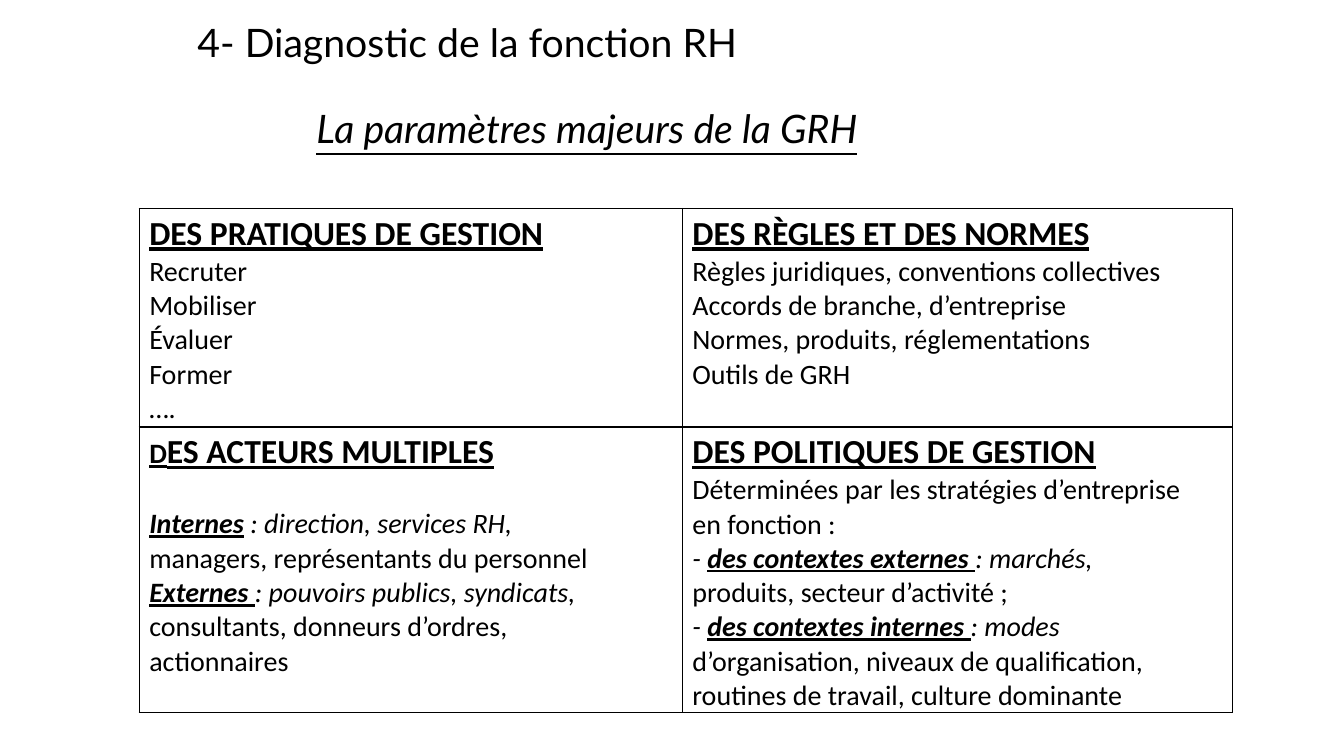
from dataclasses import dataclass

import pptx
import pptx.dml.color
import pptx.oxml
import pptx.oxml.ns
import pptx.util
from pptx.util import Pt


@dataclass(frozen=True)
class Theme:
    ink: str = "000000"
    paper: str = "FFFFFF"
    title_font: str = "Lato"
    body_font: str = "Calibri"
    title_size: int = 28
    heading_size: int = 24
    body_size: int = 20
    border: int = 1
    blank_line: float = 24.4


def rgb(value):
    return pptx.dml.color.RGBColor.from_string(value)


def apply_style(font, style):
    if "b" in style:
        font.bold = True
    if "i" in style:
        font.italic = True
    if "u" in style:
        font.underline = True


class SlideWriter:
    def __init__(self, slide, theme):
        self.slide = slide
        self.theme = theme

    def paragraph(self, paragraph, runs, font_name, size):
        font = paragraph.font
        font.name, font.size = font_name, Pt(size)
        font.color.rgb = rgb(self.theme.ink)
        shared = set.intersection(*(set(style) for _, style in runs))
        apply_style(font, shared)
        for words, style in runs:
            run = paragraph.add_run()
            run.text = words
            apply_style(run.font, set(style) - shared)

    def title(self, words, left, top, width, height, style=""):
        frame = self.slide.shapes.add_textbox(
            Pt(left), Pt(top), Pt(width), Pt(height)).text_frame
        frame.word_wrap = True
        self.paragraph(frame.paragraphs[0], [(words, style)],
                       self.theme.title_font, self.theme.title_size)

    def borders(self, cell):
        properties = cell._tc.get_or_add_tcPr()
        for side in "LRTB":
            properties.append(pptx.oxml.parse_xml(
                f'<a:ln{side} {pptx.oxml.ns.nsdecls("a")} w="{Pt(self.theme.border)}">'
                f'<a:solidFill><a:srgbClr val="{self.theme.ink}"/></a:solidFill>'
                f'</a:ln{side}>'))

    def cell(self, cell, heading, lines):
        self.borders(cell)
        cell.fill.solid()
        cell.fill.fore_color.rgb = rgb(self.theme.paper)
        cell.margin_bottom = 0
        frame = cell.text_frame
        self.paragraph(frame.paragraphs[0], heading,
                       self.theme.body_font, self.theme.heading_size)
        for line in lines:
            runs = [(line, "")] if isinstance(line, str) else line
            self.paragraph(frame.add_paragraph(), runs,
                           self.theme.body_font, self.theme.body_size)

    def table(self, content, left, top, widths, heights):
        table = self.slide.shapes.add_table(
            len(heights), len(widths), Pt(left), Pt(top),
            Pt(sum(widths)), Pt(sum(heights))).table
        table.first_row = table.horz_banding = False
        for column, width in zip(table.columns, widths):
            column.width = Pt(width)
        for row, height, quadrants in zip(table.rows, heights, content):
            row.height = Pt(height)
            for cell, (heading, lines) in zip(row.cells, quadrants):
                self.cell(cell, heading, lines)
        return table


PRACTICES = (
    [("DES PRATIQUES DE GESTION", "bu")],
    ["Recruter", "Mobiliser", "Évaluer", "Former", "…."],
)
RULES = (
    [("DES RÈGLES ET DES NORMES", "bu")],
    ["Règles juridiques, conventions collectives",
     "Accords de branche, d’entreprise",
     "Normes, produits, réglementations",
     "Outils de GRH"],
)
ACTORS = (
    [("D", "bu"), ("ES ACTEURS MULTIPLES", "bu")],
    [[("Internes", "biu"), (" : direction, services RH,", "i")],
     "managers, représentants du personnel",
     [("Externes", "biu"), (" ", "iu"), (": pouvoirs publics, syndicats,", "i")],
     "consultants, donneurs d’ordres,",
     "actionnaires"],
)
POLICIES = (
    [("DES POLITIQUES DE GESTION", "bu")],
    ["Déterminées par les stratégies d’entreprise",
     "en fonction :",
     [("- ", "i"), ("des contextes externes ", "biu"), (": marchés,", "i")],
     "produits, secteur d’activité ;",
     [("- ", "i"), ("des contextes internes ", "biu"), (": modes", "i")],
     "d’organisation, niveaux de qualification,",
     "routines de travail, culture dominante"],
)


def main():
    theme = Theme()
    presentation = pptx.Presentation()
    presentation.slide_width, presentation.slide_height = Pt(960), Pt(540)
    slide = presentation.slides.add_slide(presentation.slide_layouts[6])
    writer = SlideWriter(slide, theme)
    writer.title("4- Diagnostic de la fonction RH", 134, 9.4, 413, 41)
    writer.title("La paramètres majeurs de la GRH", 219, 71.3, 438, 41, "iu")
    parameters = writer.table([[PRACTICES, RULES], [ACTORS, POLICIES]],
                              99.4, 149, [388, 393], [156, 204])
    actors_heading = parameters.cell(1, 0).text_frame.paragraphs[0]
    actors_heading.runs[0].font.size = Pt(theme.body_size)
    actors_heading.space_after = Pt(theme.blank_line)
    presentation.save("out.pptx")


if __name__ == "__main__":
    main()
